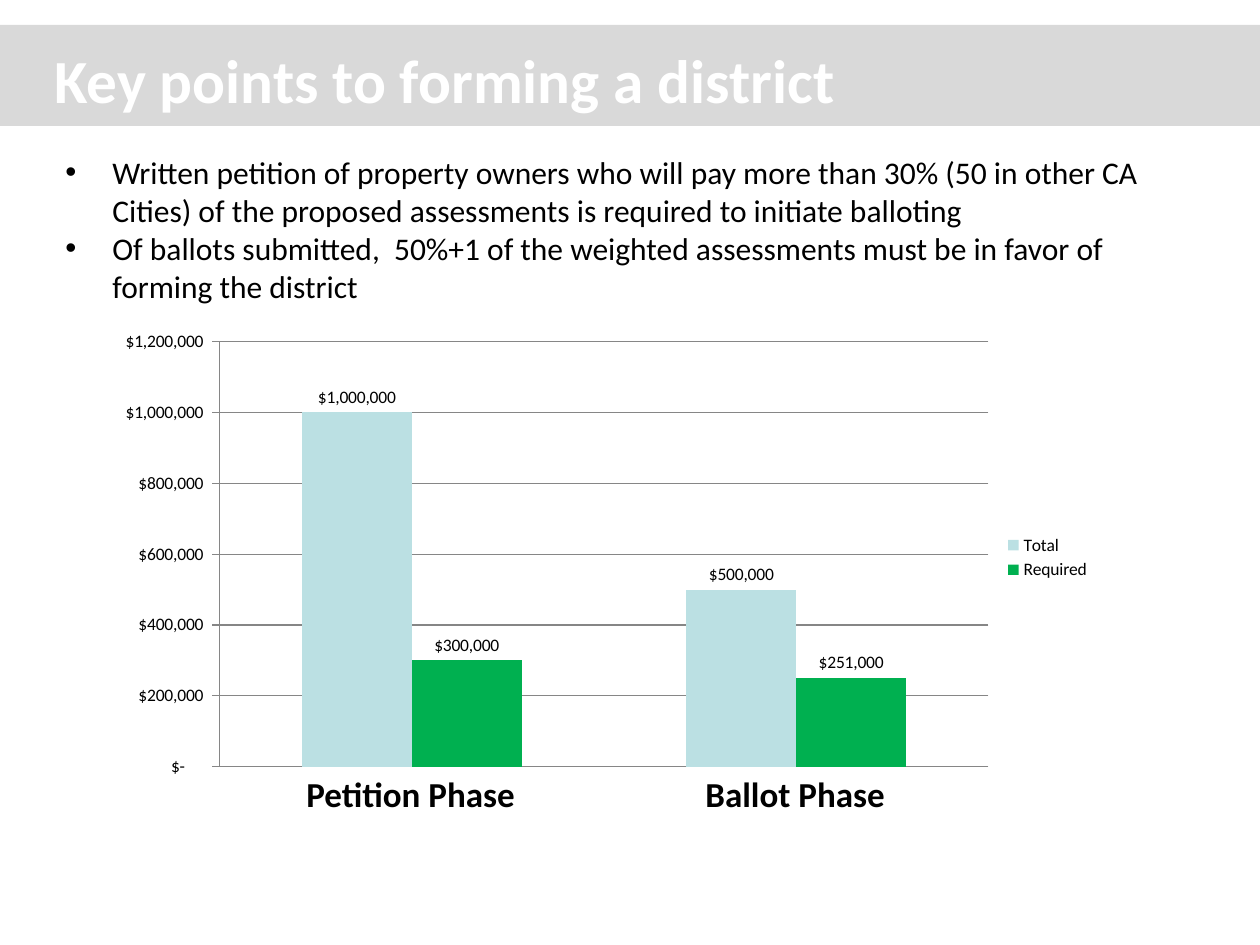
from lxml import etree
from pptx import Presentation
from pptx.chart.data import CategoryChartData
from pptx.dml.color import RGBColor
from pptx.enum import chart as ch, shapes, text
from pptx.oxml import parse_xml
from pptx.oxml.ns import nsdecls, qn
from pptx.util import Emu, Pt

PX = 914400 / 126
FONT = "Calibri"
BLACK, WHITE, GREY, AXIS = "000000", "FFFFFF", "D9D9D9", "868686"
TITLE = "Key points to forming a district"
POINTS = [
    "Written petition of property owners who will pay more than 30% (50 in other CA "
    "Cities) of the proposed assessments is required to initiate balloting",
    "Of ballots submitted,  50%+1 of the weighted assessments must be in favor of "
    "forming the district",
]
PHASES = [("Petition Phase", 294, 242), ("Ballot Phase", 693, 207)]
SERIES = [
    ("Total", (1000000, 500000), "BBE0E3"),
    ("Required", (300000, 251000), "00B050"),
]
MONEY = r'_("$"* #,##0_);_("$"* \(#,##0\);_("$"* "-"??_);_(@_)'
PLOT = {"x": 0.105, "y": 0.034, "w": 0.779, "h": 0.918}


def px(n):
    return Emu(round(n * PX))


def box(*nums):
    return [px(n) for n in nums]


def hue(code):
    return RGBColor.from_string(code)


def style(font, size, color, bold=False):
    font.name, font.size, font.bold = FONT, Pt(size), bold
    font.color.rgb = hue(color)


def write(slide, area, lines, size, color=BLACK, bold=False, bullet=False):
    frame = slide.shapes.add_textbox(*box(*area)).text_frame
    frame.word_wrap = True
    for i, line in enumerate(lines):
        para = frame.add_paragraph() if i else frame.paragraphs[0]
        if bullet:
            props = para._p.get_or_add_pPr()
            props.set("marL", str(px(47)))
            props.set("indent", str(-px(47)))
            etree.SubElement(props, qn("a:buFont"), typeface="Arial")
            etree.SubElement(props, qn("a:buChar"), char="•")
        run = para.add_run()
        run.text = line
        style(run.font, size, color, bold)
    return frame


def draw(slide):
    data = CategoryChartData(number_format=MONEY)
    data.categories = ["1", "2"]
    for name, vals, _ in SERIES:
        data.add_series(name, vals)
    kind = ch.XL_CHART_TYPE.COLUMN_CLUSTERED
    chart = slide.shapes.add_chart(kind, *box(116, 326, 987, 463), data).chart
    style(chart.font, 10, BLACK)
    chart.has_title = False
    chart.has_legend = True
    chart.legend.position = ch.XL_LEGEND_POSITION.RIGHT
    chart.legend.include_in_layout = False
    chart.category_axis.visible = False

    axis = chart.value_axis
    axis.minimum_scale, axis.maximum_scale, axis.major_unit = 0, 1200000, 200000
    axis.major_tick_mark = ch.XL_TICK_MARK.OUTSIDE
    axis.tick_labels.number_format = MONEY
    axis.tick_labels.number_format_is_linked = False
    for line in (axis.format.line, axis.major_gridlines.format.line):
        line.color.rgb = hue(AXIS)
        line.width = Pt(0.75)

    plot = chart.plots[0]
    plot.gap_width, plot.overlap, plot.vary_by_categories = 150, 0, False
    for bars, (_, _, color) in zip(plot.series, SERIES):
        bars.format.fill.solid()
        bars.format.fill.fore_color.rgb = hue(color)
        tags = bars.data_labels
        tags.show_value = True
        tags.number_format, tags.number_format_is_linked = MONEY, False
        tags.position = ch.XL_LABEL_POSITION.OUTSIDE_END

    modes = "".join(f'<c:{k}Mode val="edge"/>' for k in "xy")
    sizes = "".join(f'<c:{k} val="{v}"/>' for k, v in PLOT.items())
    area = chart._chartSpace.chart.plotArea
    for old in area.findall(qn("c:layout")):
        area.remove(old)
    area.insert(0, parse_xml(
        f'<c:layout {nsdecls("c")}><c:manualLayout><c:layoutTarget val="inner"/>'
        f'{modes}{sizes}</c:manualLayout></c:layout>'))


def main():
    deck = Presentation()
    deck.slide_width, deck.slide_height = box(1260, 945)
    slide = deck.slides.add_slide(deck.slide_layouts[6])

    band = slide.shapes.add_shape(shapes.MSO_SHAPE.RECTANGLE, *box(0, 25, 1260, 101))
    band.shadow.inherit = False
    band.fill.solid()
    band.fill.fore_color.rgb = hue(GREY)
    band.line.fill.background()

    draw(slide)
    for name, left, width in PHASES:
        write(slide, (left, 766, width, 55), [name], 20, bold=True)
    title = write(slide, (42, 32, 1071, 94), [TITLE], 35, WHITE, True)
    title.vertical_anchor = text.MSO_ANCHOR.MIDDLE
    write(slide, (53, 147, 1165, 165), POINTS, 18, bullet=True)
    deck.save("out.pptx")


if __name__ == "__main__":
    main()
